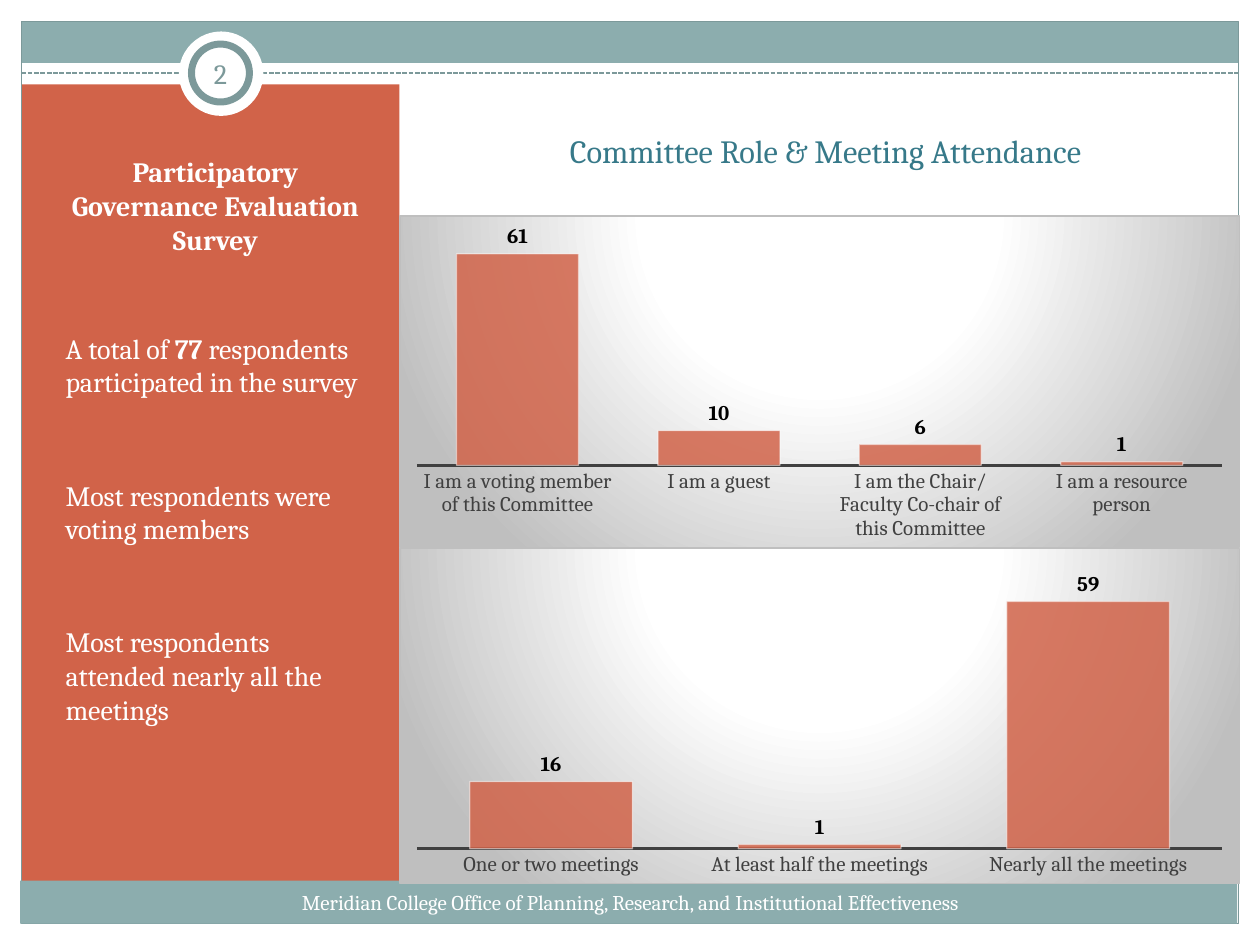
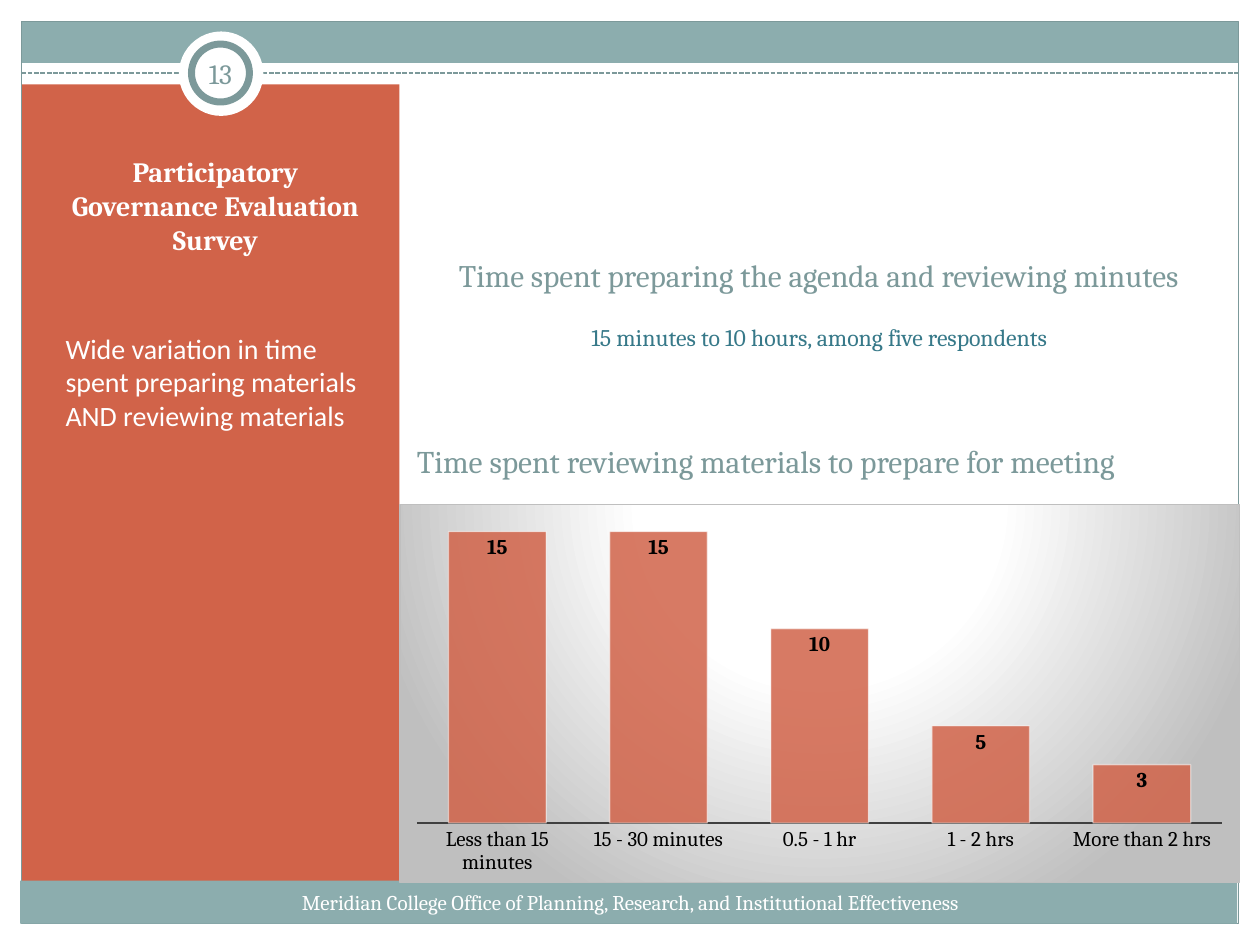
from lxml import etree
from pptx import Presentation
from pptx import util as u
from pptx.chart.data import CategoryChartData
from pptx.dml.color import RGBColor
from pptx.enum import chart as ch, dml, shapes, text
from pptx.oxml import parse_xml
from pptx.oxml.ns import nsdecls, qn

FONT = "Cambria"
WHITE, BLACK, DARK = "FFFFFF", "000000", "404040"
SAGE, BAND, RUST, TEAL, GREY = "7C999A", "8CADAE", "D16349", "377989", "BFBFBF"
LEFT, CENTER = text.PP_ALIGN.LEFT, text.PP_ALIGN.CENTER
TOP, MIDDLE, BOTTOM = (text.MSO_ANCHOR.TOP, text.MSO_ANCHOR.MIDDLE,
                       text.MSO_ANCHOR.BOTTOM)
OUTSIDE, INSIDE = ch.XL_LABEL_POSITION.OUTSIDE_END, ch.XL_LABEL_POSITION.INSIDE_END
RECT, OVAL = shapes.MSO_SHAPE.RECTANGLE, shapes.MSO_SHAPE.OVAL

SURVEY = "Participatory Governance Evaluation Survey"
FOOTER = "Meridian College Office of Planning, Research, and Institutional Effectiveness"
SIDEBAR = (0.17, 0.67, 3, 6.42)
CHART_LEFT, CHART_WIDTH = 3.17, 6.67


def rgb(color):
    return RGBColor.from_string(color)


def inches(box):
    return [u.Inches(v) for v in box]


def set_font(font, size, color, bold=False, name=FONT):
    font.size, font.bold, font.name = u.Pt(size), bold, name
    font.color.rgb = rgb(color)


def add_shape(s, kind, box, fill=None, line=None, width=0.75):
    sp = s.shapes.add_shape(kind, *inches(box))
    sp.shadow.inherit = False
    if fill:
        sp.fill.solid()
        sp.fill.fore_color.rgb = rgb(fill)
    else:
        sp.fill.background()
    if line:
        sp.line.color.rgb = rgb(line)
        sp.line.width = u.Pt(width)
    else:
        sp.line.fill.background()
    return sp


def setup_frame(tf, anchor=TOP):
    tf.word_wrap = True
    tf.auto_size = text.MSO_AUTO_SIZE.NONE
    tf.vertical_anchor = anchor


def write(p, runs, size=16, color=WHITE, bold=False, font=FONT, align=LEFT,
          before=0, after=0):
    """Fill a paragraph; runs is a string or a list of (string, bold)."""
    p.alignment = align
    p.space_before, p.space_after = u.Pt(before), u.Pt(after)
    for words, strong in [(runs, bold)] if isinstance(runs, str) else runs:
        r = p.add_run()
        r.text = words
        set_font(r.font, size, color, strong, font)


def add_text(s, box, words, anchor=TOP, **fmt):
    tf = s.shapes.add_textbox(*inches(box)).text_frame
    setup_frame(tf, anchor)
    write(tf.paragraphs[0], words, **fmt)
    return tf


# Frame shared by all slides
def add_frame(s, number):
    add_shape(s, RECT, (0.17, 0.17, 9.66, 0.33), BAND)
    for margin in ((0, 7.33, 10, 0.17), (9.83, 0, 0.17, 7.5),
                   (0, 0, 10, 0.13), (0, 0, 0.17, 7.5)):
        add_shape(s, RECT, margin, WHITE)
    add_shape(s, RECT, SIDEBAR, RUST)
    add_shape(s, RECT, (0.17, 0.17, 9.66, 7.16), line=SAGE)
    rule = s.shapes.add_connector(shapes.MSO_CONNECTOR.STRAIGHT,
                                  *inches((0.17, 0.58, 9.83, 0.58)))
    rule.line.color.rgb = rgb(SAGE)
    rule.line.width = u.Pt(0.9)
    rule.line.dash_style = dml.MSO_LINE.SQUARE_DOT
    etree.SubElement(rule._element.spPr, qn("a:effectLst"))
    add_badge(s, (1.42, 0.25, 0.67, 0.67), number)
    add_shape(s, RECT, (0.16, 6.99, 9.66, 0.34), BAND)
    add_text(s, (0.17, 7.01, 9.67, 0.4), FOOTER, size=12, align=CENTER)


def add_badge(s, box, number):
    x, y, w, h = box
    add_shape(s, OVAL, box, WHITE)
    add_shape(s, OVAL, (x + 0.1, y + 0.1, w - 0.21, h - 0.21), WHITE, SAGE, 4)
    tf = add_text(s, (x + 0.08, y + 0.09, 0.5, 0.48), number, MIDDLE,
                  color=SAGE, align=CENTER)
    tf.margin_left = tf.margin_right = u.Inches(0.05)


# Sidebar: survey title and findings
def fill_sidebar(s, box, findings, font=FONT):
    x, y, w, h = box
    title, body = s.shapes.title, s.placeholders[1]
    for sp, top, height in ((title, 0.33, 1.08), (body, 1.91, 4.12)):
        s.shapes._spTree.append(sp._element)  # bring in front of the panel
        sp.left, sp.top, sp.width, sp.height = inches(
            (x + 0.25, y + top, w - 0.42, height))
    setup_frame(title.text_frame, BOTTOM)
    write(title.text_frame.paragraphs[0], SURVEY, bold=True, align=CENTER)
    tf = body.text_frame
    setup_frame(tf)
    for i, finding in enumerate(findings):
        p = tf.add_paragraph() if i else tf.paragraphs[0]
        write(p, finding, font=font, before=35.5 if i else 3.2, after=10)
        pPr = p._p.get_or_add_pPr()
        pPr.set("marL", "0")
        pPr.set("indent", "0")
        etree.SubElement(pPr, qn("a:buNone"))


# Column chart on a radial grey panel
def panel_format():
    stops = "".join(
        f'<a:gs pos="{pos}000"><a:srgbClr val="{color}"/></a:gs>'
        for pos, color in ((0, WHITE), (39, WHITE), (100, GREY)))
    return parse_xml(
        f'<c:spPr {nsdecls("c", "a")}><a:gradFill><a:gsLst>{stops}</a:gsLst>'
        '<a:path path="circle"><a:fillToRect l="50000" t="-80000" r="50000" '
        'b="180000"/></a:path></a:gradFill><a:ln w="9525"><a:solidFill>'
        f'<a:srgbClr val="{GREY}"/></a:solidFill></a:ln></c:spPr>')


def add_columns(s, box, counts, top, labels=OUTSIDE, axis_color=DARK):
    data = CategoryChartData()
    data.categories = list(counts)
    data.add_series("Series 1", list(counts.values()))
    chart = s.shapes.add_chart(ch.XL_CHART_TYPE.COLUMN_CLUSTERED,
                               *inches(box), data).chart
    chart.has_legend = chart.has_title = False
    set_font(chart.font, 10, BLACK)
    chart._chartSpace.find(qn("c:chart")).addnext(panel_format())

    values, cats = chart.value_axis, chart.category_axis
    values.minimum_scale, values.maximum_scale = 0, top
    values.has_major_gridlines = values.visible = False
    cats.major_tick_mark = ch.XL_TICK_MARK.NONE
    set_font(cats.tick_labels.font, 12, axis_color)
    cats.format.line.color.rgb = rgb(DARK)
    cats.format.line.width = u.Pt(1.5)

    plot = chart.plots[0]
    plot.gap_width, plot.vary_by_categories = 65, False
    series = plot.series[0]
    series.format.fill.solid()
    series.format.fill.fore_color.rgb = rgb(RUST)
    series.format.line.color.rgb = rgb(WHITE)
    series.format.line.width = u.Pt(0.75)
    # Opacity of the column fill, then of its outline
    for color, alpha in zip(series._element.iter(qn("a:srgbClr")), (85, 50)):
        etree.SubElement(color, qn("a:alpha"), val=f"{alpha}000")

    plot.has_data_labels = True
    plot.data_labels.show_value = True
    plot.data_labels.position = labels
    set_font(plot.data_labels.font, 12, BLACK, bold=True)


def start_slide(prs, number, findings, font=FONT):
    s = prs.slides.add_slide(prs.slide_layouts[1])
    add_frame(s, number)
    fill_sidebar(s, SIDEBAR, findings, font)
    return s


def build_attendance(prs):
    s = start_slide(prs, "2", [
        [("A total of ", False), ("77", True),
         (" respondents participated in the survey", False)],
        "Most respondents were voting members",
        "Most respondents attended nearly all the meetings"])
    add_text(s, (3.26, 1, 6.58, 0.4), "Committee Role & Meeting Attendance",
             BOTTOM, size=18.5, color=TEAL, align=CENTER)
    roles = {"I am a voting member of this Committee": 61, "I am a guest": 10,
             "I am the Chair/Faculty Co-chair of this Committee": 6,
             "I am a resource person": 1}
    meetings = {"One or two meetings": 16, "At least half the meetings": 1,
                "Nearly all the meetings": 59}
    add_columns(s, (CHART_LEFT, 1.71, CHART_WIDTH, 2.64), roles, 70)
    add_columns(s, (CHART_LEFT, 4.35, CHART_WIDTH, 2.67), meetings, 70)


def build_time_spent(prs):
    s = start_slide(prs, "13", ["Wide variation in time spent preparing materials "
                                "AND reviewing materials"], "Calibri")
    tf = add_text(s, (3.21, 1.91, 6.58, 1),
                  "Time spent preparing the agenda and reviewing minutes",
                  MIDDLE, size=17.9, color=SAGE, align=CENTER)
    write(tf.add_paragraph(), "15 minutes to 10 hours, among five respondents",
          size=13.6, color=TEAL, align=CENTER, before=16.4)
    add_text(s, (3.21, 3.42, 6.58, 0.44),
             "Time spent reviewing materials to prepare for meeting",
             BOTTOM, size=18, color=SAGE)
    durations = {"Less than 15 minutes": 15, "15 - 30 minutes": 15,
                 "0.5 - 1 hr": 10, "1 - 2 hrs": 5, "More than 2 hrs": 3}
    add_columns(s, (CHART_LEFT, 4, CHART_WIDTH, 3.01), durations, 16,
                INSIDE, BLACK)


def main():
    prs = Presentation()
    prs.slide_width, prs.slide_height = u.Inches(10), u.Inches(7.5)
    build_attendance(prs)
    build_time_spent(prs)
    prs.save("out.pptx")


if __name__ == "__main__":
    main()
